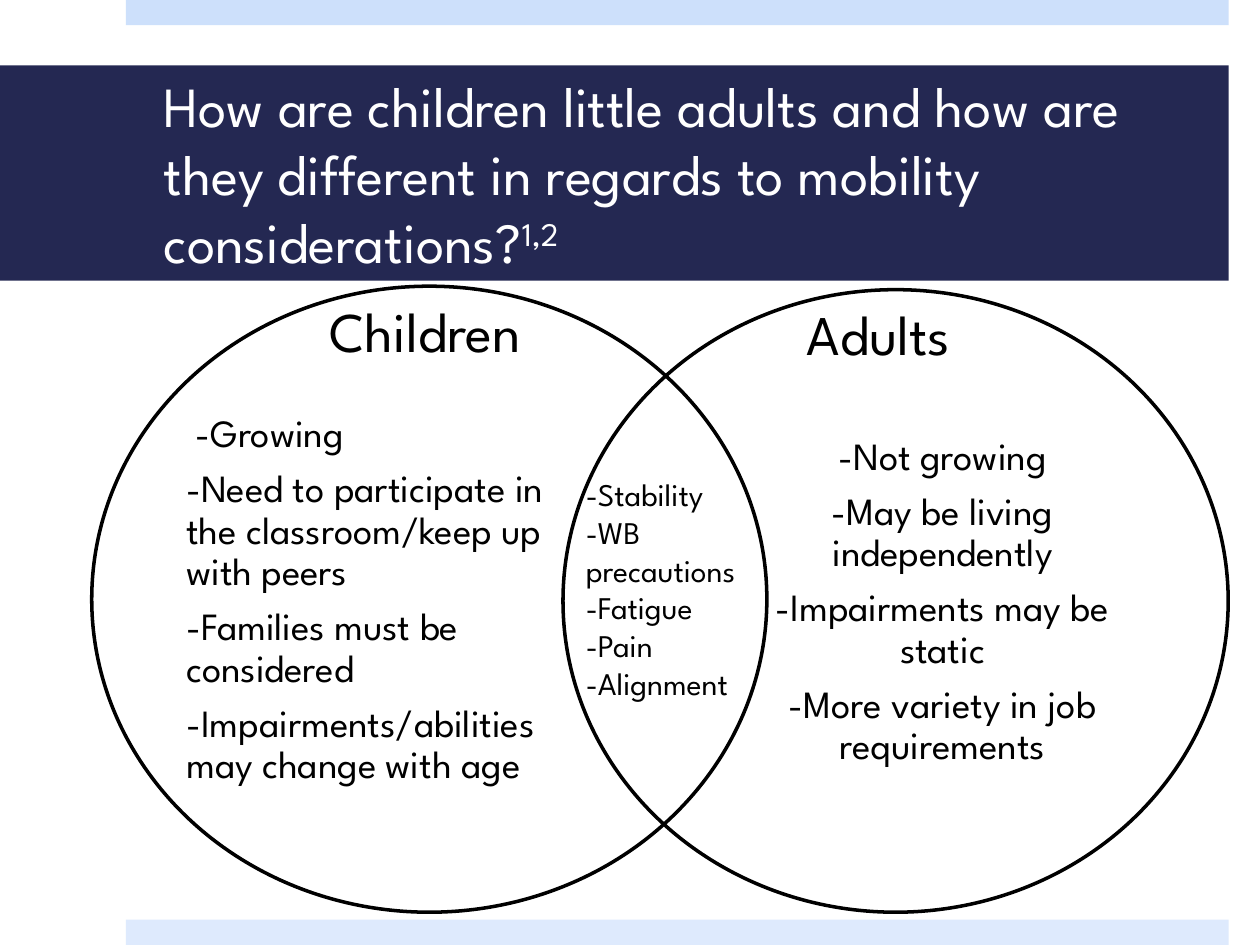
from pptx import Presentation
from pptx.dml.color import RGBColor
from pptx.enum.shapes import MSO_SHAPE
from pptx.enum.text import MSO_ANCHOR, PP_ALIGN
from pptx.util import Cm, Pt

FONT = "League Spartan"
NAVY, BLACK, WHITE = "242852", "000000", "FFFFFF"


def rgb(value):
    """Turn a hex string into a colour."""
    return RGBColor.from_string(value)


def add_run(p, text, size, color=BLACK):
    """Append one styled run to a paragraph."""
    r = p.add_run()
    r.text = text
    r.font.name = FONT
    r.font.size = Pt(size)
    r.font.color.rgb = rgb(color)
    return r


def add_block(s, shape, box, fill=None, line=None):
    """Add a preset shape with a plain fill or outline."""
    sp = s.shapes.add_shape(shape, *map(Cm, box))
    sp.shadow.inherit = False
    if fill:
        sp.fill.solid()
        sp.fill.fore_color.rgb = rgb(fill)
    else:
        sp.fill.background()
    if line:
        sp.line.color.rgb = rgb(line)
        sp.line.width = Pt(2)
    else:
        sp.line.fill.background()
    return sp


def set_insets(tf, left, top, right, bottom):
    """Set the inner margins of a text frame."""
    tf.margin_left, tf.margin_top = Cm(left), Cm(top)
    tf.margin_right, tf.margin_bottom = Cm(right), Cm(bottom)


def add_lines(s, box, lines, size, align=PP_ALIGN.LEFT):
    """Add a wrapping text box with one paragraph per line."""
    tf = s.shapes.add_textbox(*map(Cm, box)).text_frame
    tf.word_wrap = True
    for i, text in enumerate(lines):
        p = tf.paragraphs[0] if i == 0 else tf.add_paragraph()
        p.alignment = align
        add_run(p, text, size)
    return tf


def add_title(s, box, text, citation):
    """Fill the title band with the question and its raised citation."""
    tf = add_block(s, MSO_SHAPE.RECTANGLE, box, fill=NAVY).text_frame
    tf.word_wrap = True
    tf.vertical_anchor = MSO_ANCHOR.MIDDLE
    set_insets(tf, 3.3, 0.13, 0.76, 0.13)
    p = tf.paragraphs[0]
    p.alignment = PP_ALIGN.LEFT
    add_run(p, text, 32.4, WHITE)
    r = add_run(p, citation, 32.4, WHITE)
    r._r.get_or_add_rPr().set("baseline", "30000")


def add_circle(s, box, heading, heading_dx, points, points_dx, align):
    """Draw one side of the Venn diagram with its heading and points."""
    x, y, w, h = box
    add_block(s, MSO_SHAPE.OVAL, box, line=BLACK)
    body = (x + points_dx * w, y + 0.12 * h, 0.577 * w, 0.765 * h)
    tf = add_lines(s, body, points, 22, align)
    tf.vertical_anchor = MSO_ANCHOR.MIDDLE
    set_insets(tf, 0, 0, 0, 0)
    for p in tf.paragraphs:
        p.line_spacing = 0.9
        p.space_after = Pt(7.7)
    add_lines(s, (x + heading_dx, y + 0.08, 5.77, 1.63), [heading], 32, PP_ALIGN.CENTER)


def main():
    """Build the slide and save it."""
    prs = Presentation()
    prs.slide_width, prs.slide_height = Cm(25.4), Cm(19.05)
    s = prs.slides.add_slide(prs.slide_layouts[6])
    for top, color in ((0, "CDE0FB"), (18.54, "DEEAFD")):
        add_block(s, MSO_SHAPE.RECTANGLE, (2.54, top, 22.23, 0.51), fill=color)
    add_title(
        s, (0, 1.32, 24.77, 4.34),
        "How are children little adults and how are they different in regards "
        "to mobility considerations?", "1,2")
    add_circle(
        s, (1.85, 5.77, 13.61, 12.62), "Children", 3.84,
        [" -Growing", "-Need to participate in the classroom/keep up with peers",
         "-Families must be considered", "-Impairments/abilities may change with age"],
        0.14, PP_ALIGN.LEFT)
    add_circle(
        s, (11.35, 5.84, 13.41, 12.55), "Adults", 3.48,
        ["-Not growing", "-May be living independently",
         "-Impairments may be static", "-More variety in job requirements"],
        0.282, PP_ALIGN.CENTER)
    add_lines(
        s, (11.56, 9.45, 4.22, 5.64),
        ["-Stability", "-WB precautions", "-Fatigue", "-Pain", "-Alignment"], 18)
    prs.save("out.pptx")


if __name__ == "__main__":
    main()
